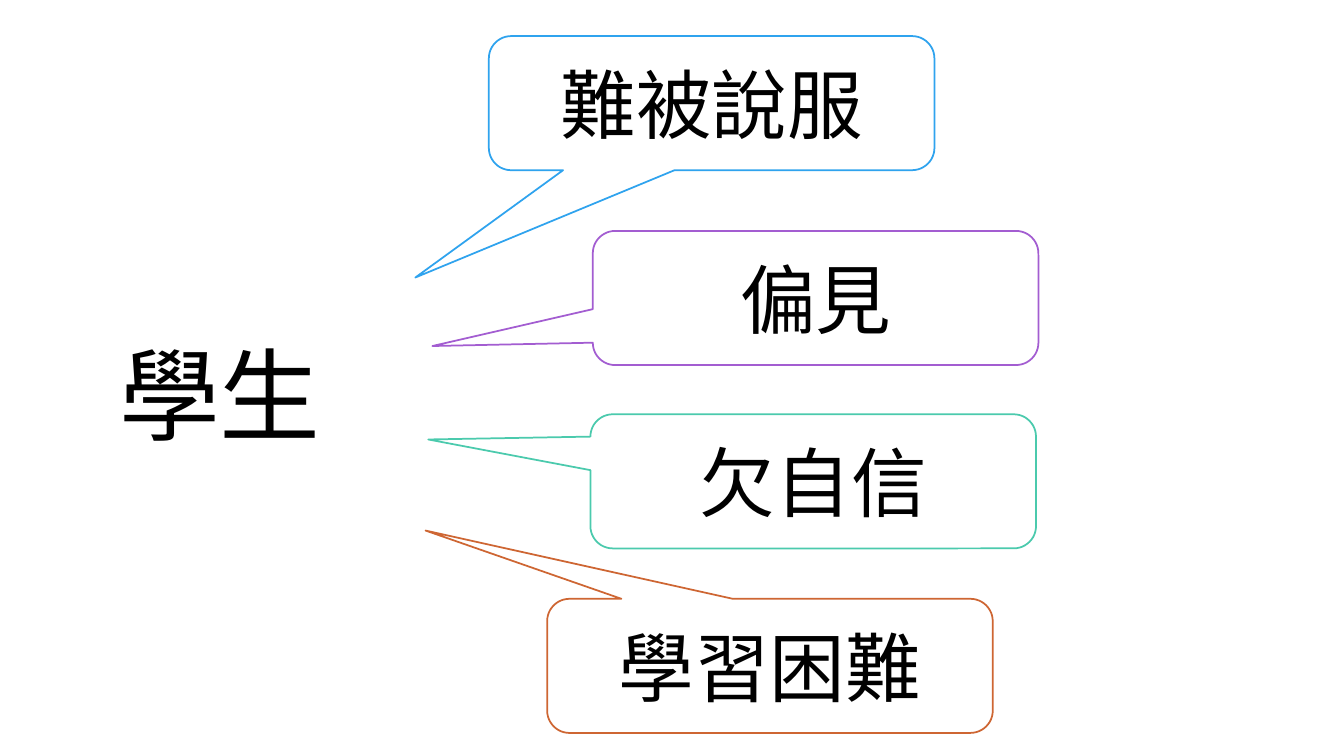
from dataclasses import dataclass

from lxml import etree
from pptx import Presentation
from pptx import util as u
from pptx.dml.color import RGBColor
from pptx.enum import shapes, text
from pptx.oxml.ns import qn
from pptx.shapes.autoshape import Shape
from pptx.slide import Slide

FONT = "Noto Sans CJK SC"
CALLOUT_WIDTH, CALLOUT_HEIGHT = u.Cm(11.23), u.Cm(3.38)


@dataclass
class Callout:
    label: str
    left: float
    top: float
    tip_x: float
    tip_y: float
    color: str


CALLOUTS = [
    Callout("難被說服", 12.32, 0.91, -0.665, 1.3, "2FA3EE"),
    Callout("偏見", 14.94, 5.82, -0.86, 0.358, "A35DD1"),
    Callout("欠自信", 14.88, 10.44, -0.864, -0.312, "4BCAAD"),
    Callout("學習困難", 13.79, 15.09, -0.773, -1.009, "CE6633"),
]


def rgb(value: str) -> RGBColor:
    return RGBColor.from_string(value)


def set_label(sp: Shape, label: str, size: float) -> None:
    tf = sp.text_frame
    tf.text = label
    p = tf.paragraphs[0]
    p.alignment = text.PP_ALIGN.CENTER
    r = p.runs[0]
    r.font.size = u.Pt(size)
    r.font.color.rgb = rgb("000000")
    r.font.name = FONT
    latin = r.font._element.find(qn("a:latin"))
    ea = etree.Element(qn("a:ea"), typeface=FONT)
    latin.addnext(ea)


def add_callout(s: Slide, callout: Callout) -> None:
    sp = s.shapes.add_shape(
        shapes.MSO_SHAPE.ROUNDED_RECTANGULAR_CALLOUT,
        u.Cm(callout.left), u.Cm(callout.top), CALLOUT_WIDTH, CALLOUT_HEIGHT,
    )
    sp.adjustments[0] = callout.tip_x
    sp.adjustments[1] = callout.tip_y
    sp.shadow.inherit = False
    sp.fill.solid()
    sp.fill.fore_color.rgb = rgb("FFFFFF")
    sp.line.color.rgb = rgb(callout.color)
    sp.line.width = u.Pt(1.25)
    sp.text_frame.vertical_anchor = text.MSO_ANCHOR.MIDDLE
    set_label(sp, callout.label, 54)


def add_subject(s: Slide) -> None:
    sp = s.shapes.add_textbox(u.Cm(2.72), u.Cm(8.26), u.Cm(5.64), u.Cm(3.33))
    sp.text_frame.word_wrap = False
    sp.text_frame.auto_size = text.MSO_AUTO_SIZE.SHAPE_TO_FIT_TEXT
    set_label(sp, "學生", 72)


def main() -> None:
    prs = Presentation()
    prs.slide_width, prs.slide_height = u.Cm(33.87), u.Cm(19.05)
    s = prs.slides.add_slide(prs.slide_layouts[6])
    for callout in CALLOUTS:
        add_callout(s, callout)
    add_subject(s)
    prs.save("out.pptx")


if __name__ == "__main__":
    main()
